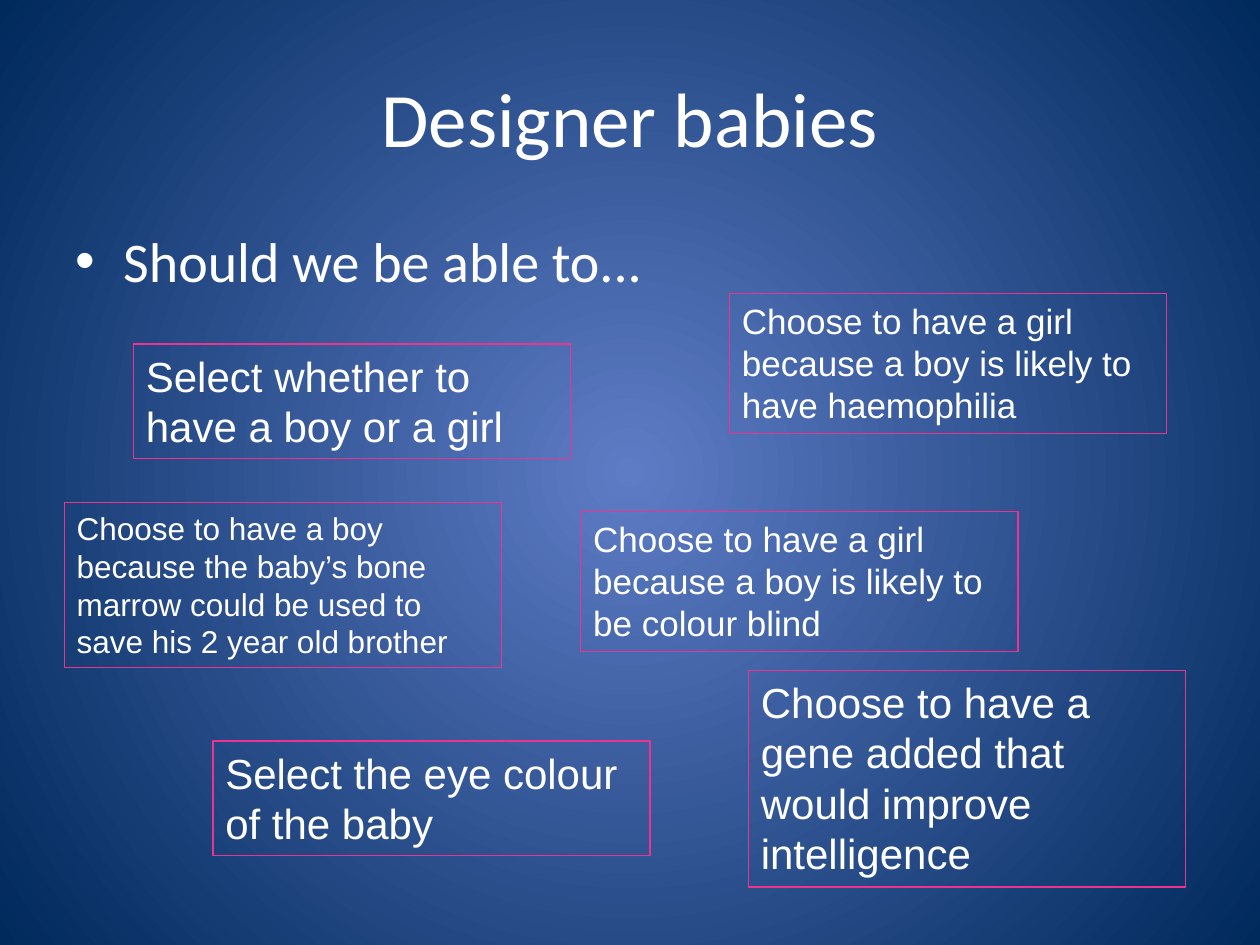
from lxml.etree import SubElement
from pptx import Presentation
from pptx.dml.color import RGBColor
from pptx.enum.text import MSO_ANCHOR, MSO_AUTO_SIZE, PP_ALIGN
from pptx.oxml.ns import qn
from pptx.util import Inches, Pt

COLORS = {"text": "FFFFFF", "frame": "EE3290", "center": "5E7CC5", "edge": "00295C"}
TITLE_ONLY = 5
CARD_WIDTH = 3.47
# left, top, height, text size, text
CARDS = [
    (1.06, 2.73, 0.91, 24, "Select whether to have a boy or a girl"),
    (0.51, 3.99, 1.31, 18, "Choose to have a boy because the baby’s bone marrow "
                           "could be used to save his 2 year old brother"),
    (5.94, 5.32, 1.72, 24, "Choose to have a gene added that would improve intelligence"),
    (1.69, 5.88, 0.91, 24, "Select the eye colour of the baby"),
    (5.79, 2.33, 1.11, 20, "Choose to have a girl because a boy is likely to "
                           "have haemophilia"),
    (4.61, 4.06, 1.11, 20, "Choose to have a girl because a boy is likely to "
                           "be colour blind"),
]


def color(name):
    return RGBColor.from_string(COLORS[name])


def add_run(para, text, size, font):
    run = para.add_run()
    run.text = text
    run.font.size = Pt(size)
    run.font.name = font
    run.font.color.rgb = color("text")


def set_background(slide):
    """Fill the slide with a gradient that spreads from its centre."""
    fill = slide.background.fill
    fill.gradient()
    for stop, name in zip(fill.gradient_stops, ("center", "edge")):
        stop.color.rgb = color(name)
    grad = next(slide.element.iter(qn("a:gradFill")))
    grad.remove(grad.find(qn("a:lin")))
    circle = SubElement(grad, qn("a:path"), path="circle")
    SubElement(circle, qn("a:fillToRect"), dict.fromkeys("ltrb", "50000"))


def set_title(slide, text):
    title = slide.shapes.title
    title.left, title.top = Inches(0.5), Inches(0.3)
    title.width, title.height = Inches(9), Inches(1.25)
    frame = title.text_frame
    frame.vertical_anchor = MSO_ANCHOR.MIDDLE
    para = frame.paragraphs[0]
    para.alignment = PP_ALIGN.CENTER
    add_run(para, text, 44, "Calibri")


def add_box(slide, left, top, width, height):
    box = slide.shapes.add_textbox(Inches(left), Inches(top), Inches(width), Inches(height))
    box.text_frame.word_wrap = True
    return box


def add_bullet(slide, text):
    box = add_box(slide, 0.5, 1.75, 9, 4.95)
    para = box.text_frame.paragraphs[0]
    para.space_before = Pt(6.4)
    add_run(para, text, 32, "Calibri")
    props = para._p.get_or_add_pPr()
    indent = Inches(0.38)
    props.set("marL", str(indent))
    props.set("indent", str(-indent))
    SubElement(props, qn("a:buFont"), typeface="Arial")
    SubElement(props, qn("a:buChar"), char="•")


def add_card(slide, left, top, height, size, text):
    box = add_box(slide, left, top, CARD_WIDTH, height)
    box.line.color.rgb = color("frame")
    box.line.width = Pt(0.75)
    frame = box.text_frame
    frame.auto_size = MSO_AUTO_SIZE.SHAPE_TO_FIT_TEXT
    add_run(frame.paragraphs[0], text, size, "Arial")


def main():
    deck = Presentation()
    deck.slide_width, deck.slide_height = Inches(10), Inches(7.5)
    slide = deck.slides.add_slide(deck.slide_layouts[TITLE_ONLY])
    set_background(slide)
    set_title(slide, "Designer babies")
    add_bullet(slide, "Should we be able to...")
    for card in CARDS:
        add_card(slide, *card)
    deck.save("out.pptx")


if __name__ == "__main__":
    main()
